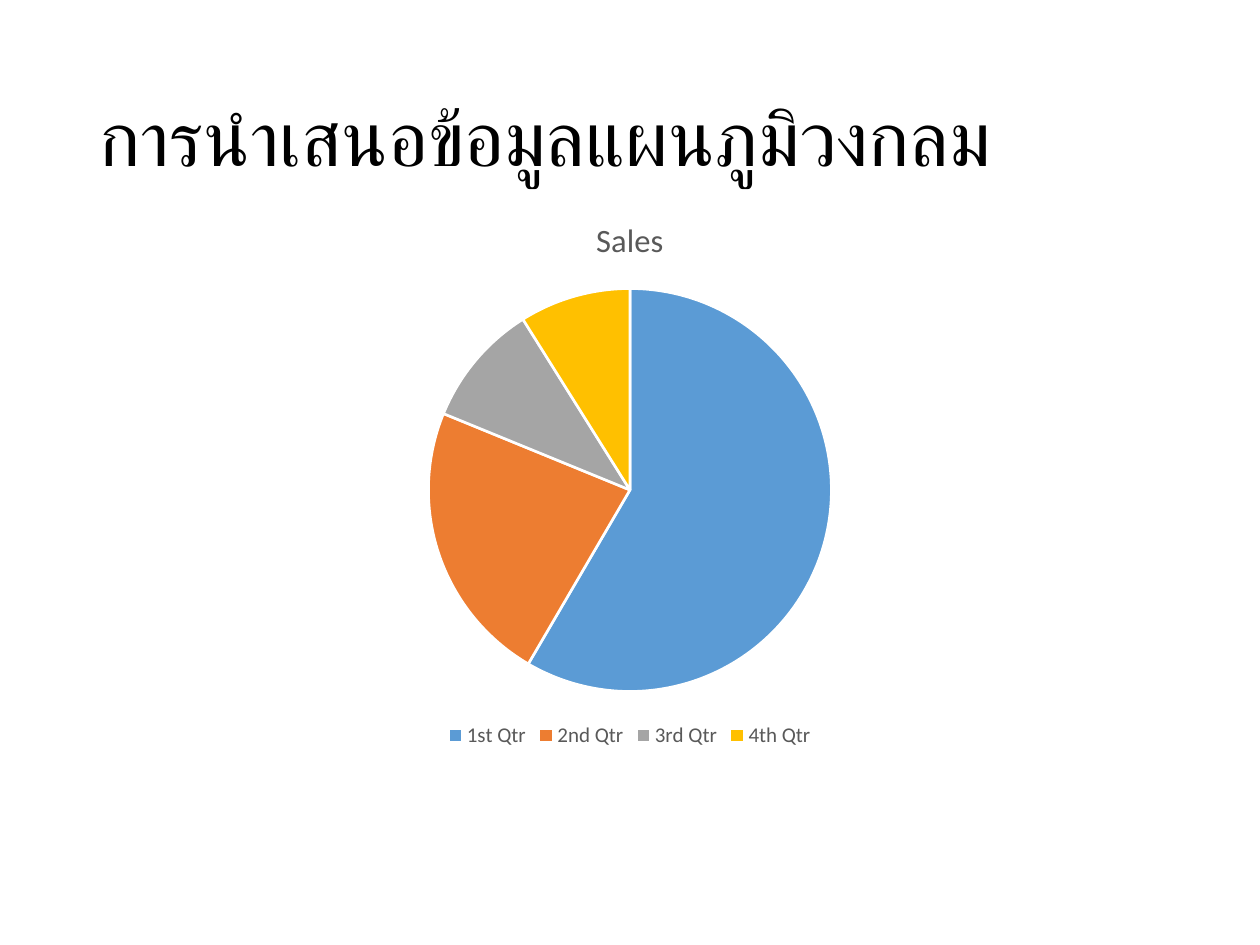
from pptx import Presentation, util as u
from pptx.chart.data import CategoryChartData
from pptx.dml.color import RGBColor
from pptx.enum import chart as ch, text

PX = 914400 / 126
BLACK = RGBColor(0x00, 0x00, 0x00)
WHITE = RGBColor(0xFF, 0xFF, 0xFF)
GREY = RGBColor(0x59, 0x59, 0x59)
BLUE = RGBColor(0x5B, 0x9B, 0xD5)
ORANGE = RGBColor(0xED, 0x7D, 0x31)
SILVER = RGBColor(0xA5, 0xA5, 0xA5)
GOLD = RGBColor(0xFF, 0xC0, 0x00)


def box(*sides):
    return [u.Emu(round(n * PX)) for n in sides]


def style(font, size, color):
    for key, val in {"name": "Calibri", "size": u.Pt(size), "bold": False}.items():
        setattr(font, key, val)
    font.color.rgb = color


deck = Presentation()
deck.slide_width, deck.slide_height = box(1260, 945)
slide = deck.slides.add_slide(deck.slide_layouts[5])

# Title
title = slide.shapes.title
title.left, title.top, title.width, title.height = box(87, 50, 1086, 183)
frame = title.text_frame
frame.vertical_anchor = text.MSO_ANCHOR.MIDDLE
para = frame.paragraphs[0]
para.alignment = text.PP_ALIGN.LEFT
para.line_spacing = 0.9
run = para.add_run()
run.text = "การนำเสนอข้อมูลแผนภูมิวงกลม"
style(run.font, 44, BLACK)

# Pie chart: label, value, colour of each slice
sales = [
    ("1st Qtr", 59, BLUE),
    ("2nd Qtr", 23, ORANGE),
    ("3rd Qtr", 10, SILVER),
    ("4th Qtr", 9, GOLD),
]
data = CategoryChartData()
data.categories = [name for name, _, _ in sales]
data.add_series("Sales", [val for _, val, _ in sales])
pie = slide.shapes.add_chart(
    ch.XL_CHART_TYPE.PIE, *box(210, 193, 840, 560), data).chart
style(pie.font, 10, BLACK)

# Chart title and legend
pie.has_title = True
head = pie.chart_title.text_frame
head.text = "Sales"
style(head.paragraphs[0].runs[0].font, 18.6, GREY)
pie.chart_title.include_in_layout = False
pie.has_legend = True
pie.legend.position = ch.XL_LEGEND_POSITION.BOTTOM
pie.legend.include_in_layout = False
style(pie.legend.font, 12, GREY)

# Slices
plot = pie.plots[0]
plot.vary_by_categories = True
for i, (_, _, color) in enumerate(sales):
    form = plot.series[0].points[i].format
    form.fill.solid()
    form.fill.fore_color.rgb = color
    form.line.color.rgb = WHITE
    form.line.width = u.Pt(1.5)

deck.save("out.pptx")
